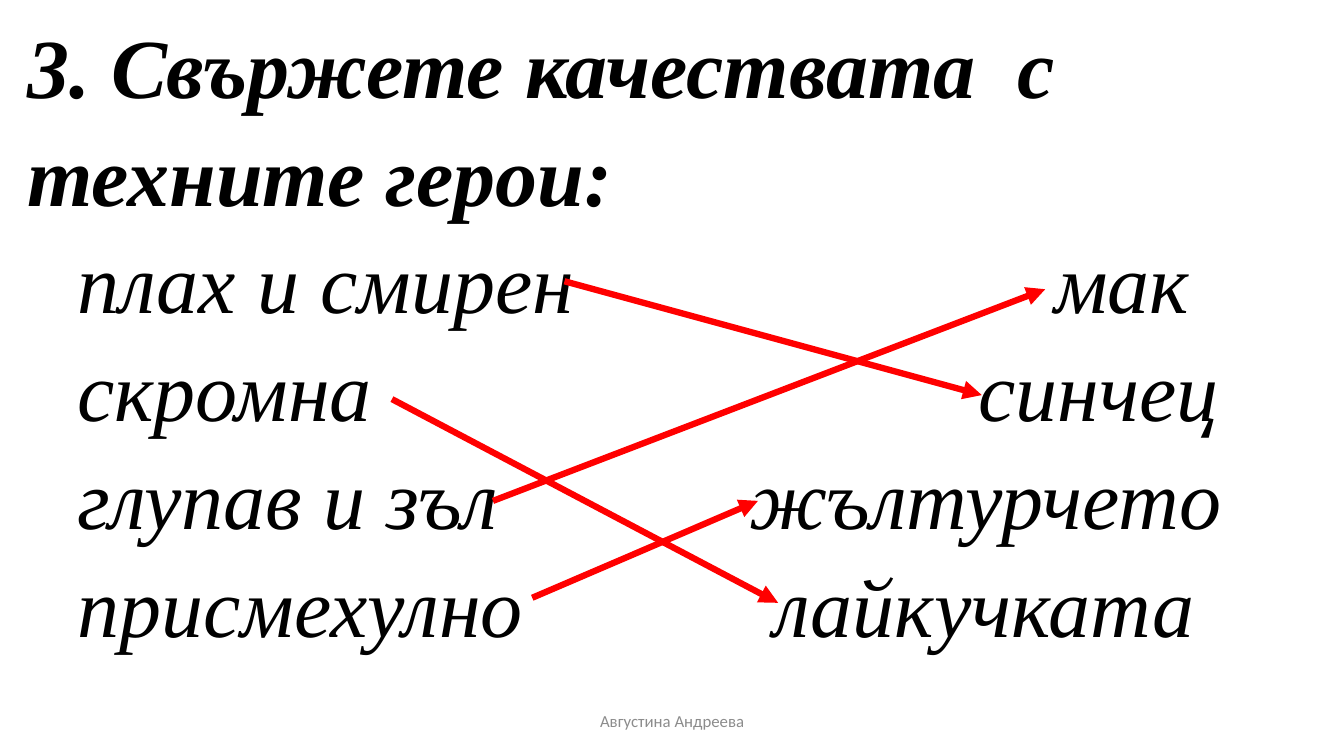
from lxml import etree
from pptx import Presentation
from pptx.dml.color import RGBColor
from pptx.enum.shapes import MSO_CONNECTOR
from pptx.enum.text import MSO_ANCHOR, PP_ALIGN
from pptx.oxml.ns import qn
from pptx.util import Pt

STRAIGHT = MSO_CONNECTOR.STRAIGHT
TOP, MIDDLE = MSO_ANCHOR.TOP, MSO_ANCHOR.MIDDLE
LEFT, CENTER = PP_ALIGN.LEFT, PP_ALIGN.CENTER

COLORS = {"text": "000000", "arrow": "FF0000", "footer": "8C8C8C"}
TASK_FONT = {"name": "Times New Roman", "size": Pt(60), "italic": True}
HEADING_FONT = {**TASK_FONT, "bold": True}
FOOTER_FONT = {"name": "Calibri", "size": Pt(12)}
LINE_PITCH = 77
TASK_TOP = 1.7

PAIRS = [
    ("плах и смирен", "мак", 697.6),
    ("скромна", "синчец", 643.6),
    ("глупав и зъл", "жълтурчето", 480),
    ("присмехулно", "лайкучката", 497),
]
MATCHES = [
    ((280, 285.1), (555.8, 430.6)),
    ((403.2, 200.9), (701.3, 282.2)),
    ((352.1, 357.8), (746.6, 206.6)),
    ((380.2, 427), (541.4, 357.8)),
]


class MatchingSlide:
    """Draws the text and arrows of a matching exercise on one slide."""

    def __init__(self, slide):
        self.slide = slide

    def text(self, bounds, lines, font, color, pitch=None, align=LEFT, anchor=TOP):
        box = self.slide.shapes.add_textbox(*map(Pt, bounds))
        frame = box.text_frame
        frame.word_wrap = True
        frame.vertical_anchor = anchor
        for index, (words, tab) in enumerate(lines):
            paragraph = frame.add_paragraph() if index else frame.paragraphs[0]
            paragraph.alignment = align
            if pitch:
                paragraph.line_spacing = Pt(pitch)
            if tab:
                stops = etree.SubElement(paragraph._p.get_or_add_pPr(), qn("a:tabLst"))
                etree.SubElement(stops, qn("a:tab"), pos=str(Pt(tab)), algn="l")
            run = paragraph.add_run()
            run.text = words
            for attribute, value in font.items():
                setattr(run.font, attribute, value)
            run.font.color.rgb = RGBColor.from_string(COLORS[color])

    def arrow(self, start, end):
        connector = self.slide.shapes.add_connector(STRAIGHT, *map(Pt, start + end))
        connector.line.width = Pt(4.5)
        connector.line.color.rgb = RGBColor.from_string(COLORS["arrow"])
        etree.SubElement(connector.line._get_or_add_ln(), qn("a:tailEnd"), type="triangle")
        etree.SubElement(connector._element.spPr, qn("a:effectLst"))


def main():
    deck = Presentation()
    deck.slide_width, deck.slide_height = Pt(960), Pt(540)
    exercise = MatchingSlide(deck.slides.add_slide(deck.slide_layouts[6]))

    heading = [("3. Свържете качествата  с техните герои:", None)]
    heading_height = 2 * LINE_PITCH
    exercise.text((12.24, TASK_TOP, 920, heading_height), heading,
                  HEADING_FONT, "text", LINE_PITCH)

    qualities = [(f"{quality}\t{hero}", tab) for quality, hero, tab in PAIRS]
    exercise.text((48.24, TASK_TOP + heading_height, 884, len(PAIRS) * LINE_PITCH),
                  qualities, TASK_FONT, "text", LINE_PITCH)

    for start, end in MATCHES:
        exercise.arrow(start, end)

    exercise.text((318.2, 500.4, 324, 28.8), [("Августина Андреева", None)],
                  FOOTER_FONT, "footer", align=CENTER, anchor=MIDDLE)
    deck.save("out.pptx")


if __name__ == "__main__":
    main()
